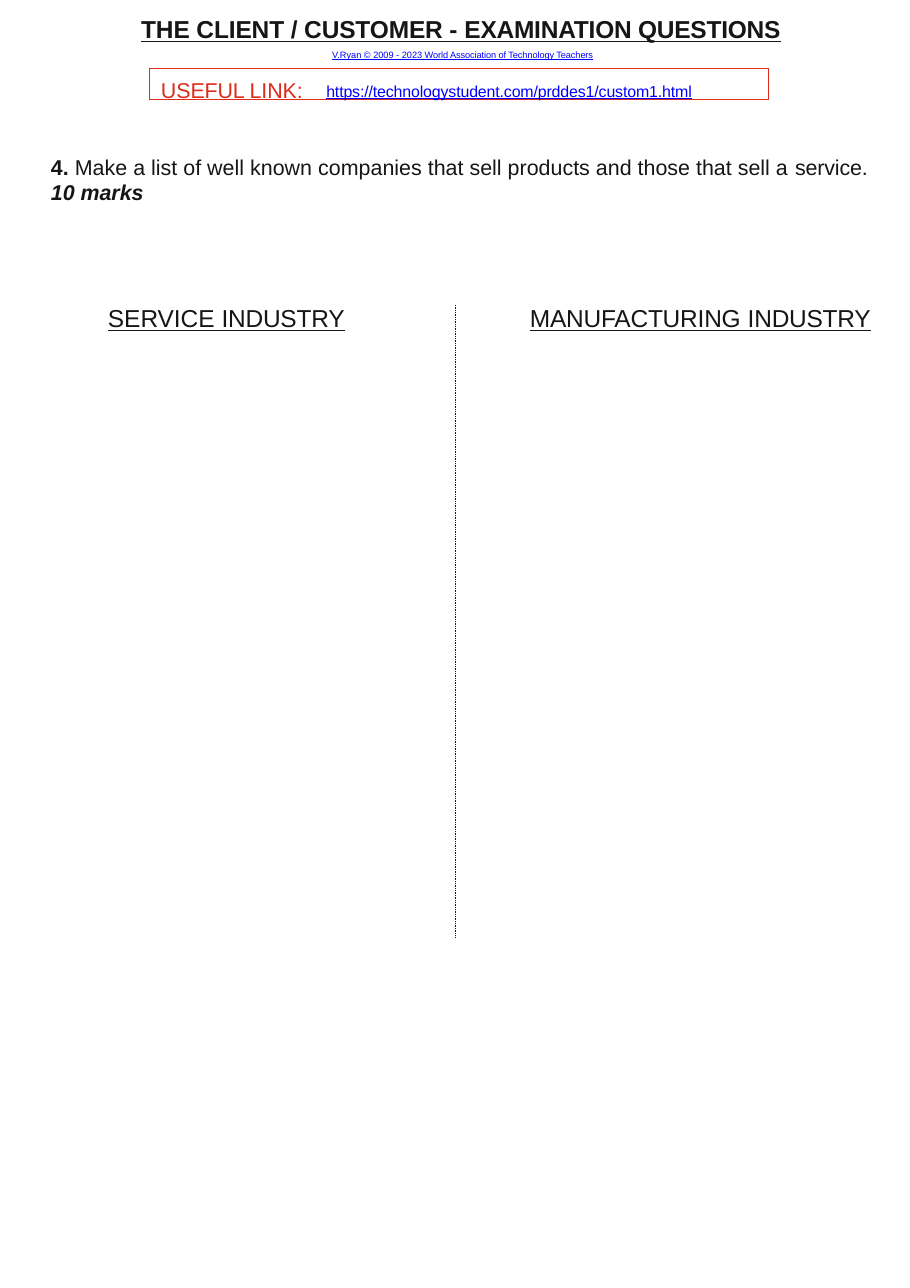
from lxml.etree import SubElement
from pptx import Presentation
from pptx.dml.color import RGBColor
from pptx.enum.dml import MSO_LINE_DASH_STYLE as Dash
from pptx.enum.shapes import MSO_CONNECTOR as Connector, MSO_SHAPE as Shape
from pptx.enum.text import MSO_ANCHOR as Anchor, PP_ALIGN as Align
from pptx.oxml.ns import qn
from pptx.util import Emu, Pt

PX = 8298
SLIDE_SIZE = (910, 1288)
FONT = "Arial"
COLORS = {"ink": "151616", "link": "0000FF", "red": "DD2B1C"}
LINE_WIDTH = 0.57
LINK_TAB = 181

# Each run is (text, style); spacing is in hundredths of a point.
TITLE = dict(size=16, color="ink", bold=True, underline=True)
CREDIT = dict(size=6, color="link", underline=True)
QUESTION = dict(size=14, color="ink")
HEADING = dict(size=16, color="ink", underline=True)

TITLE_TEXT = [
    dict(align=Align.CENTER, runs=[
        ("THE CLIENT / CUSTOMER - ", TITLE | dict(spacing=-5)),
        ("EXAMINATION QUESTIONS", TITLE | dict(spacing=-10))]),
    dict(align=Align.CENTER, before=3.6, indent=3, runs=[
        ("V.Ryan © 2009 - 2023", CREDIT),
        (" World Association of Technology Teachers", CREDIT | dict(spacing=-5))]),
]
LINK_TEXT = [
    dict(indent=12, tab=LINK_TAB, runs=[
        ("USEFUL LINK:\t", dict(size=14, color="red", spacing=-10)),
        ("https://technologystudent.com/prddes1/custom1.html",
         dict(size=18, color="link", underline=True, spacing=-10, baseline=5000))]),
]
QUESTION_TEXT = [
    dict(line=16.2, runs=[
        ("4. ", QUESTION | dict(bold=True)),
        ("Make a list of well known companies that sell products "
         "and those that sell a ", QUESTION),
        ("service.", QUESTION | dict(spacing=-10))]),
    dict(line=16.2, runs=[
        ("10 marks", QUESTION | dict(bold=True, italic=True, spacing=-5))]),
]
# heading word, its spacing, spacing of the gap, left, width
HEADINGS = [
    ("SERVICE", 0, -110, 108, 260),
    ("MANUFACTURING", -10, -90, 530, 360),
]
HEADING_TOP, HEADING_HEIGHT = 301, 32
TITLE_BOX = (136, -4, 650, 64)
LINK_BOX = (149, 68, 620, 32)
QUESTION_BOX = (51, 153, 830, 53)
DIVIDER = (455, 305, 938)


def rgb(name):
    return RGBColor.from_string(COLORS[name])


def add_run(paragraph, text, size, color, bold=False, italic=False,
            underline=False, spacing=0, baseline=0):
    run = paragraph.add_run()
    run.text = text
    font = run.font
    font.name, font.size = FONT, Pt(size)
    font.bold, font.italic, font.underline = bold, italic, underline
    font.color.rgb = rgb(color)
    properties = run._r.get_or_add_rPr()
    for name, value in (("spc", spacing), ("baseline", baseline)):
        if value:
            properties.set(name, str(value))


def fill_text(shape, paragraphs, top_inset):
    frame = shape.text_frame
    frame.word_wrap = True
    frame.vertical_anchor = Anchor.TOP
    frame.margin_left = frame.margin_right = frame.margin_bottom = 0
    frame.margin_top = Emu(top_inset * PX)
    for number, content in enumerate(paragraphs):
        paragraph = frame.add_paragraph() if number else frame.paragraphs[0]
        paragraph.alignment = content.get("align", Align.LEFT)
        if "before" in content:
            paragraph.space_before = Pt(content["before"])
        if "line" in content:
            paragraph.line_spacing = Pt(content["line"])
        properties = paragraph._p.get_or_add_pPr()
        properties.set("marL", str(content.get("indent", 0) * PX))
        properties.set("indent", "0")
        if "tab" in content:
            tabs = SubElement(properties, qn("a:tabLst"))
            SubElement(tabs, qn("a:tab"), pos=str(content["tab"] * PX), algn="l")
        for text, style in content["runs"]:
            add_run(paragraph, text, **style)


def add_text(slide, box, paragraphs, top_inset):
    shape = slide.shapes.add_textbox(*(Emu(value * PX) for value in box))
    fill_text(shape, paragraphs, top_inset)


def add_link_box(slide):
    shape = slide.shapes.add_shape(
        Shape.RECTANGLE, *(Emu(value * PX) for value in LINK_BOX))
    shape.shadow.inherit = False
    shape.fill.background()
    shape.line.color.rgb = rgb("red")
    shape.line.width = Pt(LINE_WIDTH)
    fill_text(shape, LINK_TEXT, 3)


def add_divider(slide):
    x, top, bottom = (Emu(value * PX) for value in DIVIDER)
    divider = slide.shapes.add_connector(Connector.STRAIGHT, x, top, x, bottom)
    divider.line.color.rgb = rgb("ink")
    divider.line.width = Pt(LINE_WIDTH)
    divider.line.dash_style = Dash.ROUND_DOT
    SubElement(divider._element.spPr, qn("a:effectLst"))


def main():
    presentation = Presentation()
    presentation.slide_width, presentation.slide_height = (
        Emu(value * PX) for value in SLIDE_SIZE)
    slide = presentation.slides.add_slide(presentation.slide_layouts[6])
    add_text(slide, QUESTION_BOX, QUESTION_TEXT, 2)
    for word, word_spacing, gap_spacing, left, width in HEADINGS:
        runs = [(text, HEADING | dict(spacing=spacing)) for text, spacing in (
            (word, word_spacing), (" ", gap_spacing), ("INDUSTRY", -10))]
        box = (left, HEADING_TOP, width, HEADING_HEIGHT)
        add_text(slide, box, [dict(runs=runs)], 2)
    add_text(slide, TITLE_BOX, TITLE_TEXT, 18)
    add_link_box(slide)
    add_divider(slide)
    presentation.save("out.pptx")


if __name__ == "__main__":
    main()
